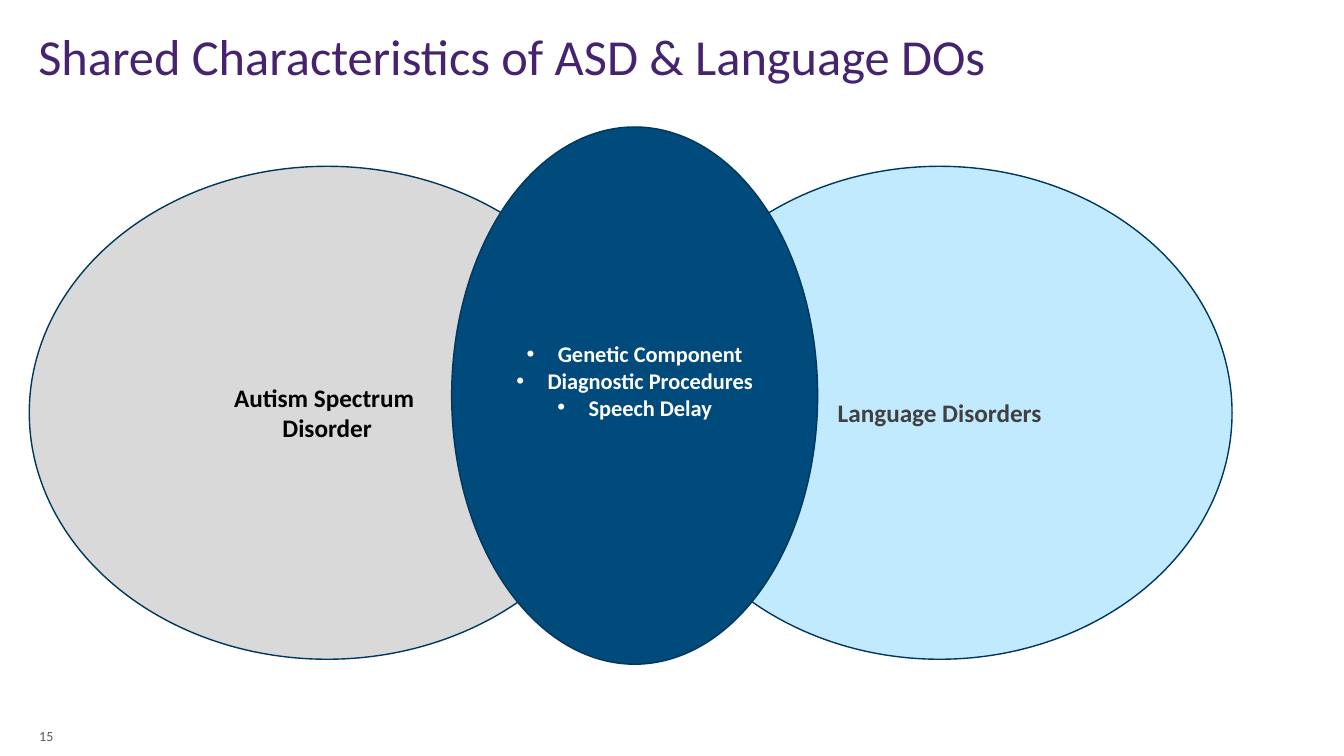
import pptx
import pptx.dml.color
import pptx.enum.shapes
import pptx.enum.text
import pptx.oxml
import pptx.util
from pptx.util import Inches


def color(value):
    return pptx.dml.color.RGBColor.from_string(value)


def add_text(paragraph, text, size, text_color, bold=False):
    run = paragraph.add_run()
    run.text = text
    run.font.name = "Calibri"
    run.font.size = pptx.util.Pt(size)
    run.font.bold = bold
    run.font.color.rgb = color(text_color)


presentation = pptx.Presentation()
presentation.slide_width = Inches(13.33)
presentation.slide_height = Inches(7.5)
slide = presentation.slides.add_slide(presentation.slide_layouts[5])

title = slide.shapes.title
title.left, title.top = Inches(0.28), Inches(0.21)
title.width, title.height = Inches(9.86), Inches(0.76)
title.text_frame.word_wrap = True
title.text_frame.vertical_anchor = pptx.enum.text.MSO_ANCHOR.MIDDLE
paragraph = title.text_frame.paragraphs[0]
paragraph.alignment = pptx.enum.text.PP_ALIGN.LEFT
paragraph.line_spacing = 0.9
add_text(paragraph, "Shared Characteristics of ASD & Language DOs", 36, "45236E")

page_number = slide.shapes.add_textbox(Inches(0.29), Inches(7.03), Inches(0.59), Inches(0.4))
page_number.text_frame.word_wrap = True
page_number.text_frame.vertical_anchor = pptx.enum.text.MSO_ANCHOR.BOTTOM
add_text(page_number.text_frame.paragraphs[0], "15", 10, "595959")

ellipses = [
    (0.29, 1.65, 5.91, 4.89, "D9D9D9", "000000", 18, False,
     ["Autism Spectrum ", "Disorder"]),
    (6.42, 1.65, 5.8, 4.89, "C2EAFF", "404040", 18, False,
     ["Language Disorders"]),
    (4.48, 1.26, 3.63, 5.33, "004A7C", "FFFFFF", 16, True,
     ["Genetic Component", "Diagnostic Procedures", "Speech Delay"]),
]
for left, top, width, height, fill, text_color, size, bulleted, lines in ellipses:
    shape = slide.shapes.add_shape(
        pptx.enum.shapes.MSO_SHAPE.OVAL,
        Inches(left), Inches(top), Inches(width), Inches(height))
    shape.shadow.inherit = False
    shape.fill.solid()
    shape.fill.fore_color.rgb = color(fill)
    shape.line.color.rgb = color("00375C")
    shape.line.width = pptx.util.Pt(1)
    frame = shape.text_frame
    frame.word_wrap = True
    frame.vertical_anchor = pptx.enum.text.MSO_ANCHOR.MIDDLE
    if bulleted:
        frame.margin_bottom = Inches(0.35)
    for index, line in enumerate(lines):
        paragraph = frame.add_paragraph() if index else frame.paragraphs[0]
        paragraph.alignment = pptx.enum.text.PP_ALIGN.CENTER
        if bulleted:
            properties = paragraph._p.get_or_add_pPr()
            properties.set("marL", str(Inches(0.31)))
            properties.set("indent", str(Inches(-0.31)))
            properties.append(pptx.oxml.parse_xml(
                '<a:buFont xmlns:a="http://schemas.openxmlformats.org/drawingml/2006/main" typeface="Arial"/>'))
            properties.append(pptx.oxml.parse_xml(
                '<a:buChar xmlns:a="http://schemas.openxmlformats.org/drawingml/2006/main" char="•"/>'))
        add_text(paragraph, line, size, text_color, True)

presentation.save("out.pptx")
